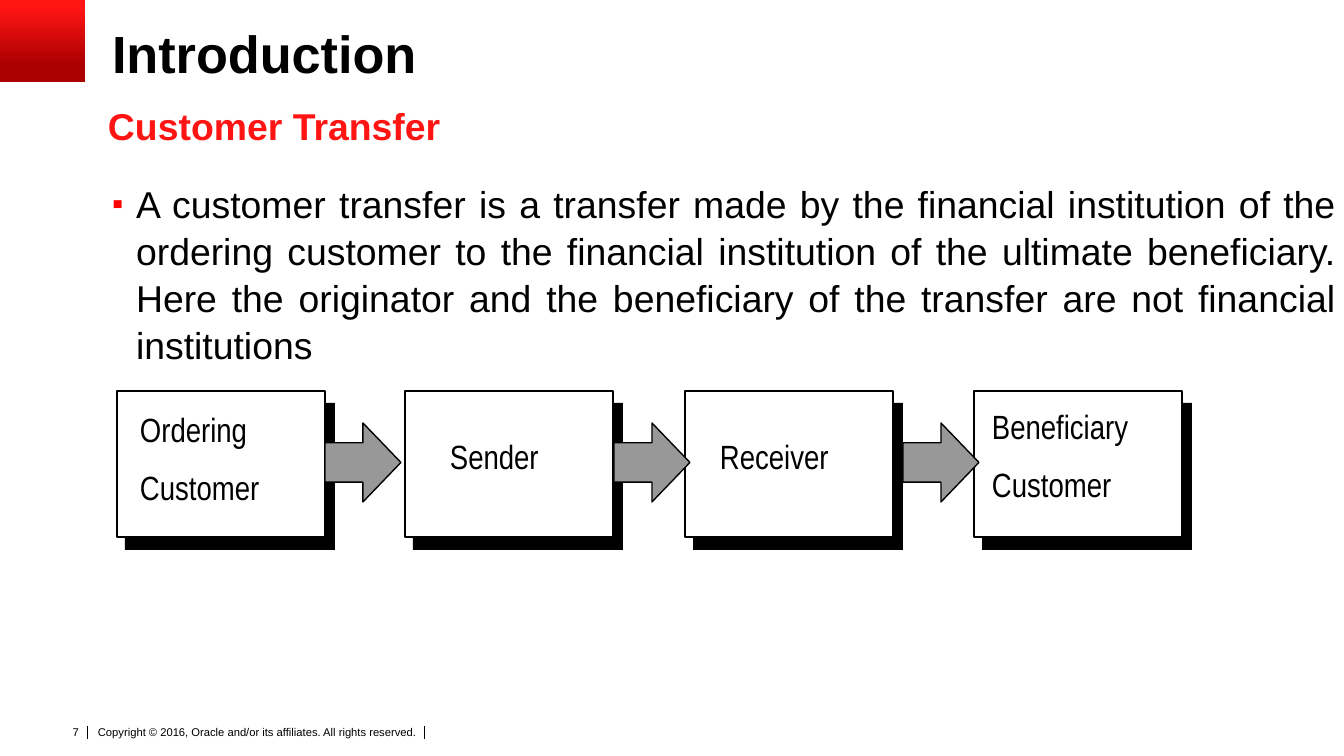
import pptx
import pptx.dml.color
import pptx.enum.shapes
import pptx.enum.text
import pptx.oxml
import pptx.oxml.ns
import pptx.util

PX = 914400 / 134.4
SHAPE = pptx.enum.shapes.MSO_SHAPE
ALIGN = pptx.enum.text.PP_ALIGN
ANCHOR = pptx.enum.text.MSO_ANCHOR
AUTO = pptx.enum.text.MSO_AUTO_SIZE

TITLE = "Introduction"
SUBTITLE = "Customer Transfer"
DEFINITION = (
    "A customer transfer is a transfer made by the financial institution of the "
    "ordering customer to the financial institution of the ultimate beneficiary. "
    "Here the originator and the beneficiary of the transfer are not financial "
    "institutions"
)
COPYRIGHT = "Copyright © 2016, Oracle and/or its affiliates. All rights reserved."
PAGE_NUMBER = "7"
PARTIES = [
    (117, ["Ordering", "Customer"], (140, 409)),
    (405, ["Sender"], (450, 436)),
    (685, ["Receiver"], (720, 436)),
    (974, ["Beneficiary", "Customer"], (992, 406)),
]
BOX_TOP, BOX_WIDTH, BOX_HEIGHT = 391, 208, 146
SHADOW_RIGHT, SHADOW_DOWN = 8, 12
ARROW_LEFT, ARROW_STEP = 325, 289
LABEL_PITCH = 58
FOOTER_RULES = [87, 425]

TITLE_FONT = {"name": "Arial", "size": pptx.util.Pt(28), "bold": True}
SUBTITLE_FONT = {"name": "Arial", "size": pptx.util.Pt(20), "bold": True}
BODY_FONT = {"name": "Arial", "size": pptx.util.Pt(20), "bold": False}
LABEL_FONT = {"name": "Arial Narrow", "size": pptx.util.Pt(18)}
FOOTER_FONT = {"name": "Arial", "size": pptx.util.Pt(6)}


def px(*lengths):
    return [round(length * PX) for length in lengths]


def color(value):
    return pptx.dml.color.RGBColor.from_string(value)


def apply(target, values):
    for name, value in values.items():
        setattr(target, name, value)


def add_xml(parent, markup):
    namespace = pptx.oxml.ns.nsdecls("a")
    parent.append(pptx.oxml.parse_xml(markup.replace("/>", f" {namespace}/>", 1)))


def write(holder, text, font, ink="000000", margins=(0, 0, 0, 0), wrap=True,
          anchor=ANCHOR.TOP, paragraph_format=None, bullet=()):
    frame = holder.text_frame
    sides = ("margin_left", "margin_top", "margin_right", "margin_bottom")
    apply(frame, dict(zip(sides, px(*margins))))
    apply(frame, {"word_wrap": wrap, "auto_size": AUTO.NONE, "vertical_anchor": anchor})
    paragraph = frame.paragraphs[0]
    paragraph.text = text
    for markup in bullet:
        if markup.startswith("<a:buClr>"):
            bullet_color = pptx.oxml.parse_xml(
                markup.replace("<a:buClr>", f"<a:buClr {pptx.oxml.ns.nsdecls('a')}>"))
            paragraph._p.get_or_add_pPr().append(bullet_color)
        else:
            add_xml(paragraph._p.get_or_add_pPr(), markup)
    apply(paragraph, {"alignment": ALIGN.LEFT, "space_before": pptx.util.Pt(0),
                      **(paragraph_format or {})})
    run_font = paragraph.runs[0].font
    apply(run_font, font)
    run_font.color.rgb = color(ink)


def place(holder, left, top, width, height):
    apply(holder, dict(zip(("left", "top", "width", "height"),
                           px(left, top, width, height))))


def add_text(slide, bounds, *args, **options):
    write(slide.shapes.add_textbox(*px(*bounds)), *args, **options)


def add_block(slide, kind, bounds, fill, outline=None):
    block = slide.shapes.add_shape(kind, *px(*bounds))
    block.shadow.inherit = False
    if fill:
        block.fill.solid()
        block.fill.fore_color.rgb = color(fill)
    if outline:
        block.line.color.rgb = color(outline)
        block.line.width = pptx.util.Pt(0.75)
    else:
        block.line.fill.background()
    return block


def add_footer(slide):
    add_text(slide, (93, 722, 612, 32), COPYRIGHT, FOOTER_FONT, margins=(5, 3, 5, 3))
    for x in FOOTER_RULES:
        rule = slide.shapes.add_connector(
            pptx.enum.shapes.MSO_CONNECTOR.STRAIGHT, *px(x, 726, x, 739))
        rule.line.color.rgb = color("000000")
        rule.line.width = pptx.util.Pt(0.5)
        add_xml(rule._element.spPr, "<a:effectLst/>")
    add_text(slide, (52, 718, 40, 27), PAGE_NUMBER, FOOTER_FONT,
             margins=(13, 7, 13, 7), wrap=False,
             paragraph_format={"alignment": ALIGN.RIGHT})


def add_corner(slide):
    corner = add_block(slide, SHAPE.RECTANGLE, (0, 0, 85, 82), None)
    corner.fill.gradient()
    corner.fill.gradient_angle = 90
    for stop, (position, shade) in zip(corner.fill.gradient_stops,
                                       [(0.2, "AA0000"), (0.9, "FF1414")]):
        stop.position = position
        stop.color.rgb = color(shade)


def add_flow(slide):
    for left, _, _ in PARTIES:
        add_block(slide, SHAPE.RECTANGLE,
                  (left + SHADOW_RIGHT, BOX_TOP + SHADOW_DOWN,
                   BOX_WIDTH + 2, BOX_HEIGHT + 1), "000000")
        add_block(slide, SHAPE.RECTANGLE,
                  (left, BOX_TOP, BOX_WIDTH, BOX_HEIGHT), "FFFFFF", "000000")
    for index in range(len(PARTIES) - 1):
        add_block(slide, SHAPE.RIGHT_ARROW,
                  (ARROW_LEFT + index * ARROW_STEP, 423, 76, 79), "989898", "000000")
    for _, lines, (left, top) in PARTIES:
        for row, line in enumerate(lines):
            add_text(slide, (left, top + row * LABEL_PITCH, 140, 40), line,
                     LABEL_FONT, wrap=False)


def main():
    deck = pptx.Presentation()
    deck.slide_width, deck.slide_height = px(1344, 756)
    slide = deck.slides.add_slide(deck.slide_layouts[3])
    title, definition, subtitle = slide.placeholders

    place(title, 112, 27, 1210, 59)
    write(title, TITLE, TITLE_FONT, anchor=ANCHOR.MIDDLE,
          paragraph_format={"line_spacing": 0.9})

    place(definition, 102, 179, 1235, 450)
    write(definition, DEFINITION, BODY_FONT,
          bullet=['<a:buClr><a:srgbClr val="FF0000"/></a:buClr>',
                  '<a:buSzPct val="85000"/>', '<a:buFont typeface="Arial"/>',
                  '<a:buChar char="▪"/>'],
          paragraph_format={"alignment": ALIGN.JUSTIFY, "line_spacing": 1.05,
                            "space_after": pptx.util.Pt(6)})
    indents = definition.text_frame.paragraphs[0]._p.get_or_add_pPr()
    for name, length in {"marL": 34, "indent": -24}.items():
        indents.set(name, str(px(length)[0]))

    place(subtitle, 108, 103, 1210, 44)
    write(subtitle, SUBTITLE, SUBTITLE_FONT, "FF1414", bullet=["<a:buNone/>"])
    heading = subtitle.text_frame.paragraphs[0]._p.get_or_add_pPr()
    for name in ("marL", "indent"):
        heading.set(name, "0")

    add_footer(slide)
    add_corner(slide)
    add_flow(slide)
    deck.save("out.pptx")


if __name__ == "__main__":
    main()
